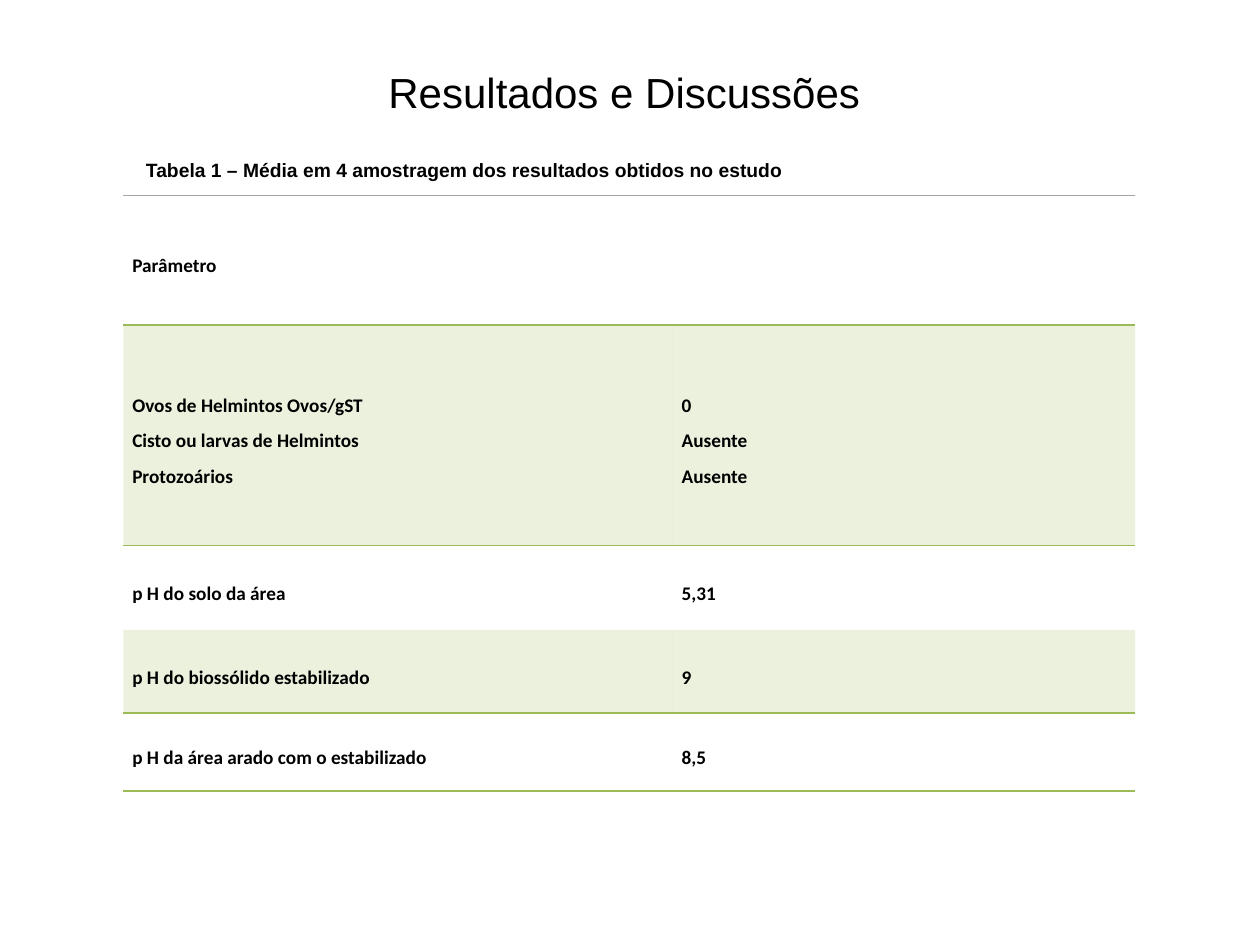
from lxml.etree import SubElement
from pptx import Presentation
from pptx.dml.color import RGBColor
from pptx.enum.text import MSO_ANCHOR as Anchor, PP_ALIGN as Align
from pptx.oxml import parse_xml
from pptx.oxml.ns import nsdecls, qn
from pptx.util import Inches, Pt

# Content
TITLE = "Resultados e Discussões "
CAPTION = "Tabela 1 – Média em 4 amostragem dos resultados obtidos no estudo"
ROWS = [
    (["Parâmetro"], []),
    (["Ovos de Helmintos Ovos/gST", "Cisto ou larvas de Helmintos", "Protozoários"],
     ["0", "Ausente", "Ausente"]),
    (["p H do solo da área "], ["5,31"]),
    (["p H do biossólido estabilizado"], ["9"]),
    (["p H da área arado com o estabilizado"], ["8,5"]),
]

# Layout and colours
COLUMN_WIDTHS = [4.36, 3.67]
ROW_HEIGHTS = [1.03, 1.75, 0.67, 0.66, 0.62]
TABLE_LEFT, TABLE_TOP = 0.98, 1.55
BLACK = RGBColor(0, 0, 0)
GREEN = RGBColor(0x9B, 0xBB, 0x59)
GRAY = RGBColor(0xA6, 0xA6, 0xA6)
SHADED_ROWS = (1, 3)
# Row: (top line, bottom line)
RULES = {0: (GRAY, GREEN), 1: (GREEN, None), 3: (None, GREEN), 4: (GREEN, GREEN)}
NO_STYLE = "{2D5ABB26-0587-4C30-8999-92F81FD0307C}"


def write(frame, lines, font="Calibri", size=11, bold=True, align=None, spacing=None):
    for index, line in enumerate(lines):
        paragraph = frame.paragraphs[0] if index == 0 else frame.add_paragraph()
        paragraph.alignment = align
        paragraph.line_spacing = spacing
        run = paragraph.add_run()
        run.text = line
        run.font.name, run.font.size, run.font.bold = font, Pt(size), bold
        run.font.color.rgb = BLACK


def add_rules(cell, top, bottom):
    properties = cell._tc.get_or_add_tcPr()
    lines = [(tag, color) for tag, color in (("lnT", top), ("lnB", bottom)) if color]
    for position, (tag, color) in enumerate(lines):
        properties.insert(position, parse_xml(
            f'<a:{tag} {nsdecls("a")} w="{Pt(1)}"><a:solidFill>'
            f'<a:srgbClr val="{color}"/></a:solidFill></a:{tag}>'))


def shade(cell):
    cell.fill.solid()
    cell.fill.fore_color.rgb = GREEN
    color = cell._tc.tcPr.find(qn("a:solidFill")).find(qn("a:srgbClr"))
    SubElement(color, qn("a:alpha"), val="20000")


presentation = Presentation()
presentation.slide_width, presentation.slide_height = Inches(10), Inches(7.5)
slide = presentation.slides.add_slide(presentation.slide_layouts[5])

# Title
title = slide.shapes.title
title.left, title.top, title.width, title.height = map(Inches, (0.5, 0.3, 9, 0.85))
title.text_frame.vertical_anchor = Anchor.MIDDLE
write(title.text_frame, [TITLE], font="Arial", size=24, bold=False, align=Align.CENTER)

# Results table
graphic = slide.shapes.add_table(
    len(ROWS), len(COLUMN_WIDTHS), Inches(TABLE_LEFT), Inches(TABLE_TOP),
    Inches(sum(COLUMN_WIDTHS)), Inches(sum(ROW_HEIGHTS)))
table = graphic.table
table.first_row = table.horz_banding = False
table._tbl.tblPr.find(qn("a:tableStyleId")).text = NO_STYLE
for column, width in zip(table.columns, COLUMN_WIDTHS):
    column.width = Inches(width)
for row, (contents, height) in enumerate(zip(ROWS, ROW_HEIGHTS)):
    table.rows[row].height = Inches(height)
    for column, lines in enumerate(contents):
        cell = table.cell(row, column)
        cell.vertical_anchor = Anchor.MIDDLE
        cell.margin_left = cell.margin_right = Inches(0.07)
        cell.margin_top = cell.margin_bottom = 0
        write(cell.text_frame, lines, align=Align.JUSTIFY, spacing=1.5)
        if row in SHADED_ROWS:
            shade(cell)
        add_rules(cell, *RULES.get(row, (None, None)))

# Caption
caption = slide.shapes.add_textbox(*map(Inches, (1.06, 1.01, 7.95, 0.77)))
caption.text_frame.word_wrap = True
caption.text_frame.vertical_anchor = Anchor.MIDDLE
caption.text_frame.margin_bottom = Inches(0.14)
write(caption.text_frame, [CAPTION], font="Arial")

presentation.save("out.pptx")
